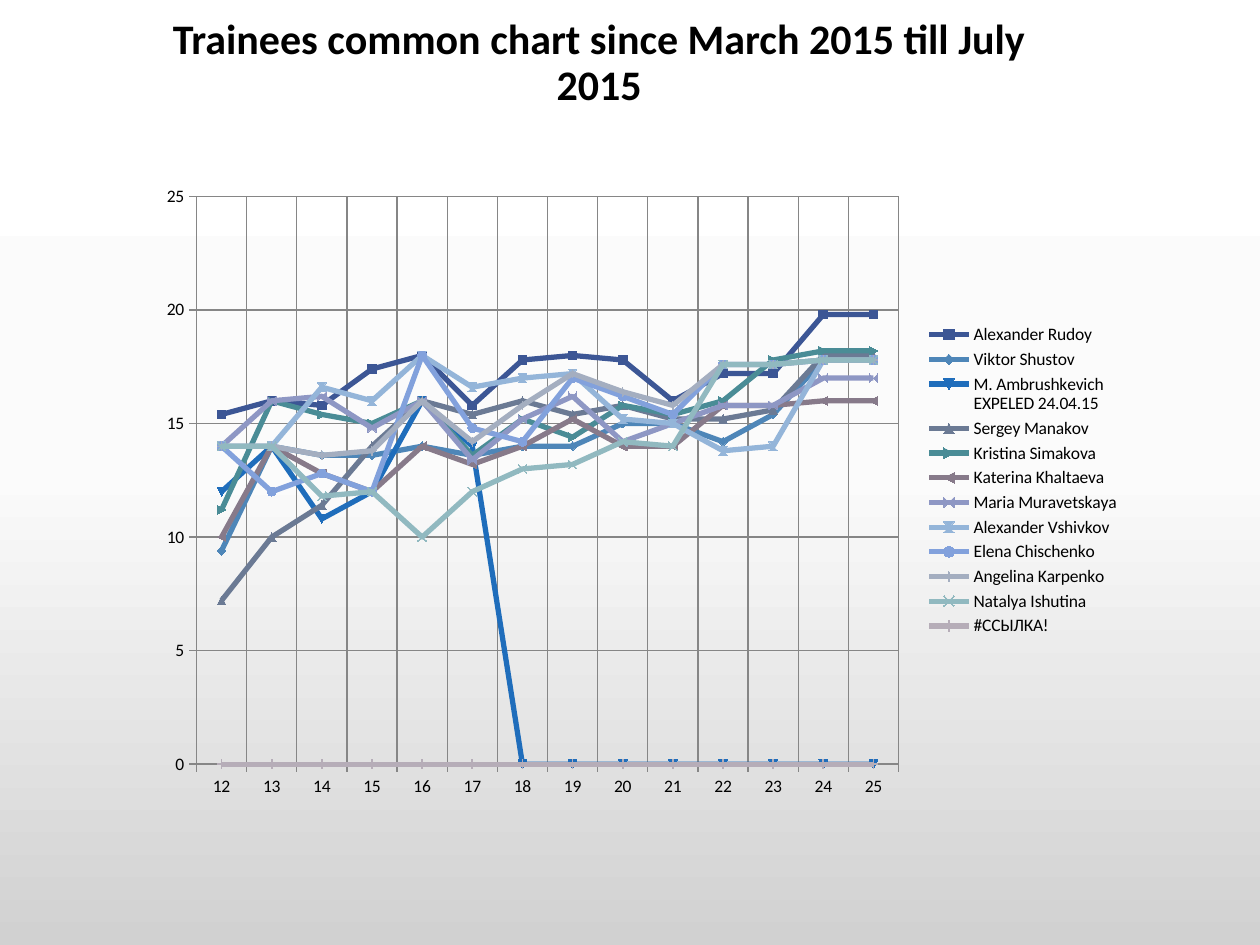
from lxml.etree import SubElement
from pptx import Presentation
from pptx.chart.data import CategoryChartData
from pptx.dml.color import RGBColor
from pptx.enum.chart import XL_CHART_TYPE, XL_LEGEND_POSITION, XL_TICK_MARK
from pptx.enum.text import MSO_ANCHOR, PP_ALIGN
from pptx.oxml.ns import qn
from pptx.util import Pt

FONT = "Calibri"
BLACK = RGBColor(0x00, 0x00, 0x00)
GRID = RGBColor(0x86, 0x86, 0x86)
BACKGROUND_STOPS = [
    (0, RGBColor(0xFF, 0xFF, 0xFF)),
    (50, RGBColor(0xFB, 0xFB, 0xFB)),
    (100, RGBColor(0xD1, 0xD1, 0xD1)),
]

WEEKS = range(12, 26)
TRAINEES = [
    ("Alexander Rudoy", RGBColor(0x3C, 0x56, 0x95),
     [15.4, 16, 15.8, 17.4, 18, 15.8, 17.8, 18, 17.8, 16, 17.2, 17.2, 19.8, 19.8]),
    ("Viktor Shustov", RGBColor(0x4E, 0x86, 0xB8),
     [9.4, 14, 13.6, 13.6, 14, 13.6, 14, 14, 15, 15, 14.2, 15.4, 17.8, 17.8]),
    ("M. Ambrushkevich\nEXPELED 24.04.15", RGBColor(0x1F, 0x6D, 0xBB),
     [12, 14, 10.8, 12, 16, 14, 0, 0, 0, 0, 0, 0, 0, 0]),
    ("Sergey Manakov", RGBColor(0x6B, 0x7A, 0x94),
     [7.2, 10, 11.4, 14, 16, 15.4, 16, 15.4, 15.8, 15.2, 15.2, 15.6, 18, 18]),
    ("Kristina Simakova", RGBColor(0x4A, 0x8C, 0x96),
     [11.2, 16, 15.4, 15, 16, 13.6, 15.2, 14.4, 15.8, 15.4, 16, 17.8, 18.2, 18.2]),
    ("Katerina Khaltaeva", RGBColor(0x87, 0x7A, 0x8A),
     [10, 14, 12.8, 12, 14, 13.2, 14, 15.2, 14, 14, 15.8, 15.8, 16, 16]),
    ("Maria Muravetskaya", RGBColor(0x8E, 0x97, 0xC4),
     [14, 16, 16.2, 14.8, 16, 13.4, 15.2, 16.2, 14.2, 15, 15.8, 15.8, 17, 17]),
    ("Alexander Vshivkov", RGBColor(0x94, 0xB5, 0xD9),
     [14, 14, 16.6, 16, 18, 16.6, 17, 17.2, 15.2, 15, 13.8, 14, 17.8, 17.8]),
    ("Elena Chischenko", RGBColor(0x82, 0xA1, 0xDC),
     [14, 12, 12.8, 12, 18, 14.8, 14.2, 17, 16.2, 15.4, 17.6, 17.6, 17.8, 17.8]),
    ("Angelina Karpenko", RGBColor(0xA4, 0xAE, 0xC0),
     [14, 14, 13.6, 13.8, 16, 14.2, 15.8, 17.2, 16.4, 15.8, 17.6, 17.6, 17.8, 17.8]),
    ("Natalya Ishutina", RGBColor(0x91, 0xB9, 0xC0),
     [14, 14, 11.8, 12, 10, 12, 13, 13.2, 14.2, 14, 17.6, 17.6, 17.8, 17.8]),
    ("#ССЫЛКА!", RGBColor(0xB6, 0xAD, 0xB8), [0] * len(WEEKS)),
]


def set_background(s):
    fill = s.background.fill
    fill.gradient()
    fill.gradient_angle = 270
    stops = next(s.element.iter(qn("a:gsLst")))
    stops.clear()
    for percent, color in BACKGROUND_STOPS:
        stop = SubElement(stops, qn("a:gs"), pos=str(percent * 1000))
        SubElement(stop, qn("a:srgbClr"), val=str(color))


def add_text(s, text, left, top, width, height, *, size, bold=False,
             color=BLACK, align=PP_ALIGN.CENTER, anchor=MSO_ANCHOR.BOTTOM,
             line_spacing=0.9):
    tf = s.shapes.add_textbox(Pt(left), Pt(top), Pt(width), Pt(height)).text_frame
    tf.word_wrap = True
    tf.vertical_anchor = anchor
    p = tf.paragraphs[0]
    p.alignment = align
    p.line_spacing = line_spacing
    r = p.add_run()
    r.text = text
    r.font.name = FONT
    r.font.size = Pt(size)
    r.font.bold = bold
    r.font.color.rgb = color


def style_axis(axis):
    axis.has_major_gridlines = True
    axis.major_tick_mark = XL_TICK_MARK.OUTSIDE
    axis.minor_tick_mark = XL_TICK_MARK.NONE
    for line in (axis.format.line, axis.major_gridlines.format.line):
        line.color.rgb = GRID
        line.width = Pt(0.75)


def style_series(series, color):
    series.smooth = False
    series.format.line.color.rgb = color
    series.format.line.width = Pt(3)
    marker = series.marker
    marker.size = 5
    marker.format.fill.solid()
    marker.format.fill.fore_color.rgb = color
    marker.format.line.color.rgb = color


def place_plot(chart, x, y, w, h):
    """Fix the inner plot area, in fractions of the chart."""
    plot_area = next(chart.element.iter(qn("c:plotArea")))
    for old in plot_area.findall(qn("c:layout")):
        plot_area.remove(old)
    layout = SubElement(plot_area, qn("c:layout"))
    plot_area.insert(0, layout)
    manual = SubElement(layout, qn("c:manualLayout"))
    settings = [("layoutTarget", "inner"), ("xMode", "edge"), ("yMode", "edge"),
                ("x", x), ("y", y), ("w", w), ("h", h)]
    for tag, value in settings:
        SubElement(manual, qn(f"c:{tag}"), val=str(value))


def add_line_chart(s, left, top, width, height):
    data = CategoryChartData()
    data.categories = [str(week) for week in WEEKS]
    for name, _, values in TRAINEES:
        data.add_series(name, values)
    chart = s.shapes.add_chart(XL_CHART_TYPE.LINE_MARKERS, Pt(left), Pt(top),
                               Pt(width), Pt(height), data).chart
    chart.has_title = False
    chart.font.name = FONT
    chart.font.size = Pt(10)
    chart.font.color.rgb = BLACK
    chart.has_legend = True
    chart.legend.position = XL_LEGEND_POSITION.RIGHT
    chart.legend.include_in_layout = False
    style_axis(chart.category_axis)
    style_axis(chart.value_axis)
    chart.value_axis.minimum_scale = 0
    chart.value_axis.maximum_scale = 25
    chart.value_axis.major_unit = 5
    plot = chart.plots[0]
    plot.vary_by_categories = False
    for series, (_, color, _) in zip(plot.series, TRAINEES):
        style_series(series, color)
    place_plot(chart, 0.04, 0.05, 0.72, 0.9)


def main():
    prs = Presentation()
    prs.slide_width, prs.slide_height = Pt(720), Pt(540)
    s = prs.slides.add_slide(prs.slide_layouts[6])
    set_background(s)
    add_text(s, "Trainees common chart since March 2015 till July 2015",
             65.5, 15, 553.7, 51, size=24, bold=True)
    add_line_chart(s, 90, 94.3, 557.3, 360.7)
    prs.save("out.pptx")


if __name__ == "__main__":
    main()
